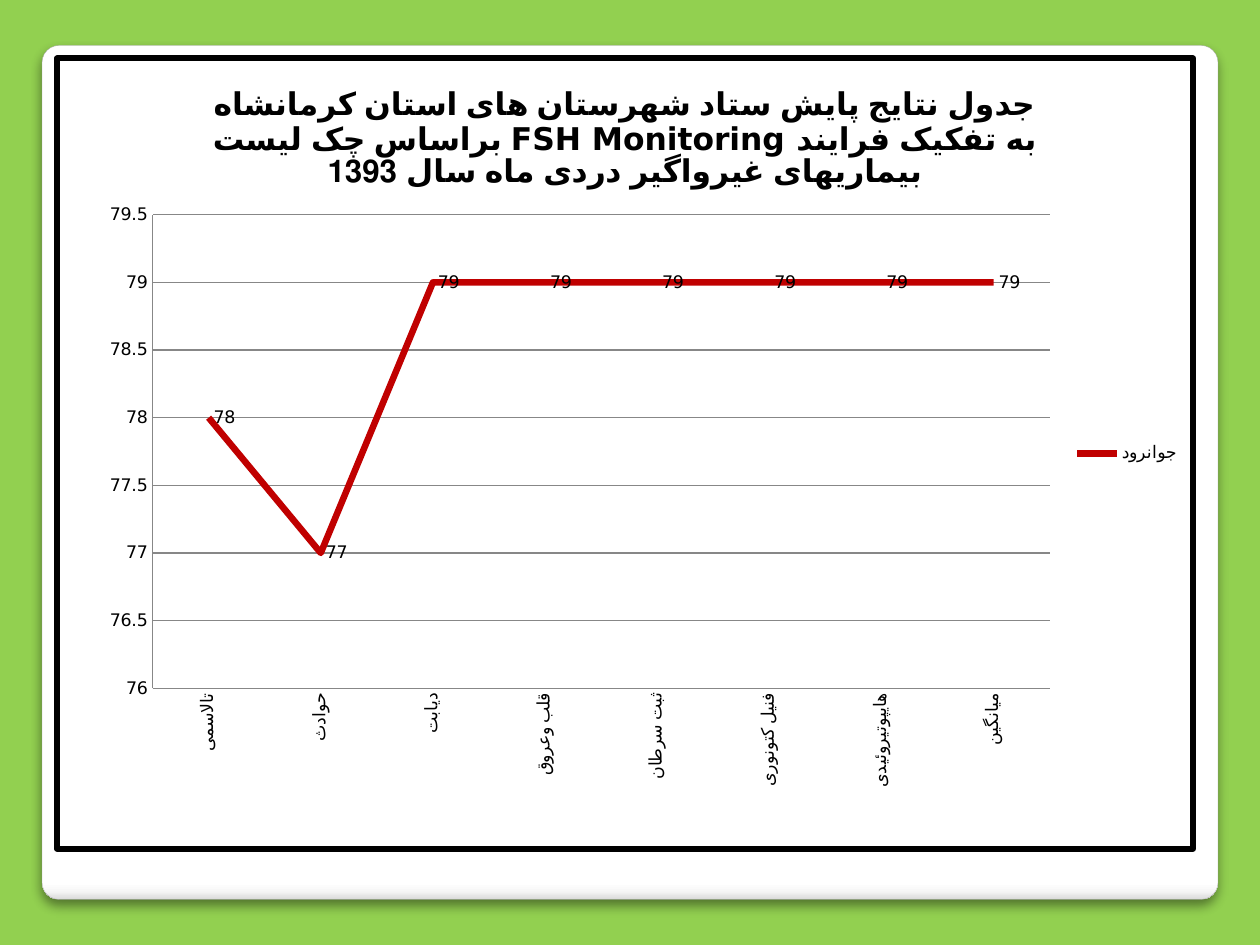
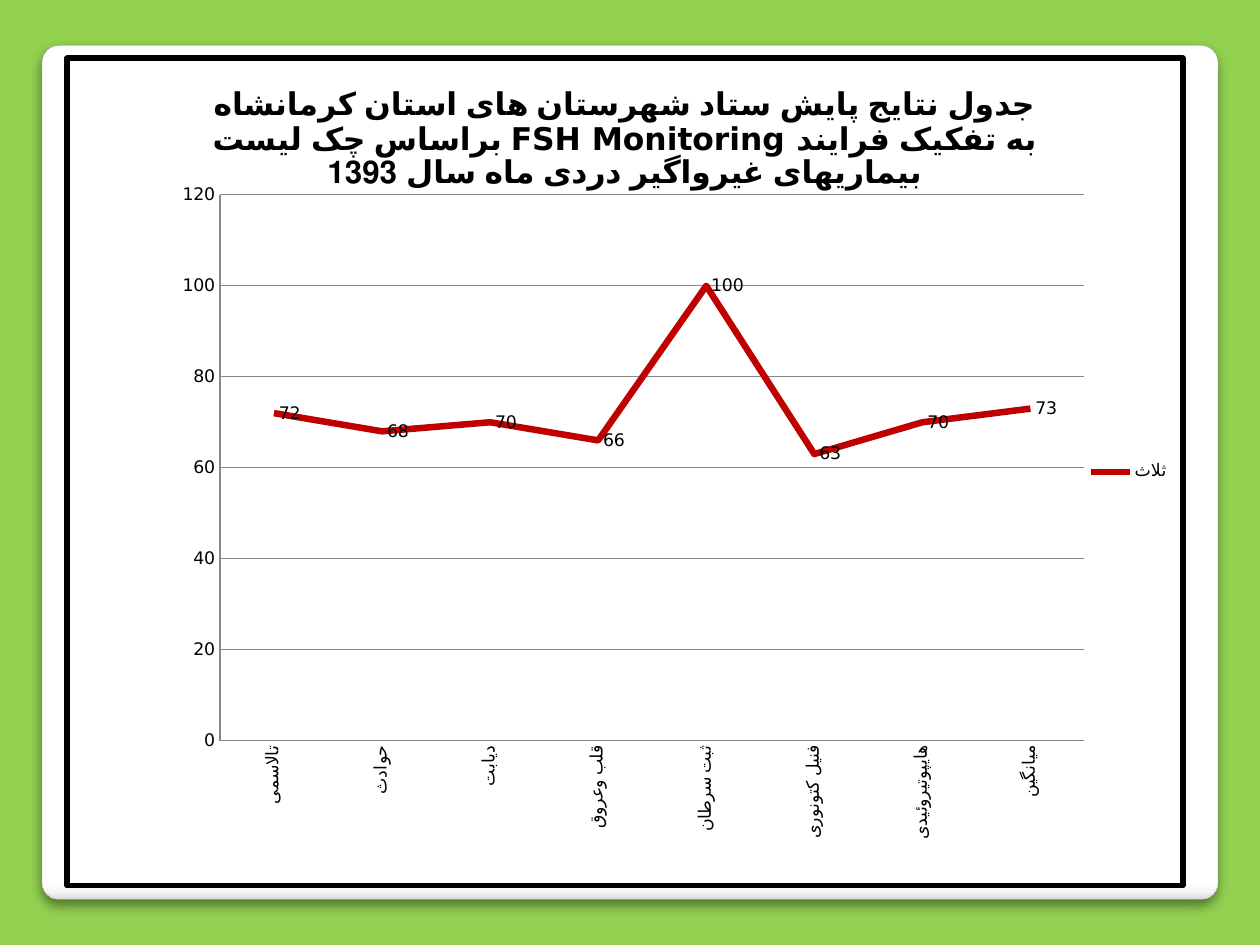
from lxml import etree
from pptx import Presentation
from pptx import oxml
from pptx.chart import data
from pptx.dml import color
from pptx.enum import chart as ch, shapes
from pptx.oxml import ns
from pptx.util import Pt

HEX = {"back": "92D050", "card": "FFFFFF", "edge": "A4A4A4", "line": "C00000",
       "grid": "878787", "ink": "000000"}
FADE = [(0, "FFFFFF"), (98, "FFFFFF"), (99, "F7F7F7"), (100, "DADADA")]
FONT = "DejaVu Sans"

TITLE = ("جدول نتایج پایش ستاد شهرستان های استان کرمانشاه براساس چک لیست "
         "FSH Monitoring به تفکیک فرایند بیماریهای غیرواگیر دردی ماه سال 1393")
CATS = ["تالاسمی", "حوادث", "دیابت", "قلب وعروق", "ثبت سرطان",
        "فنیل کتونوری", "هایپوتیروئیدی", "میانگین"]

# One entry per slide: town, values, frame in points, plot in fractions, axis
TOWNS = [
    {"name": "جوانرود", "vals": [78, 77, 79, 79, 79, 79, 79, 79],
     "box": (31, 31.7, 652.3, 455), "plot": (0.084, 0.198, 0.79, 0.599),
     "axis": (76, 79.5, 0.5)},
    {"name": "ثلاث", "vals": [72, 68, 70, 66, 100, 63, 70, 73],
     "box": (36.7, 31.7, 640.8, 476), "plot": (0.137, 0.165, 0.775, 0.66),
     "axis": (0, 120, 20)},
]


def rgb(key):
    return color.RGBColor.from_string(HEX[key])


def node(tag, body):
    """Parse one element, with its namespaces declared."""
    return oxml.parse_xml(f"<{tag} {ns.nsdecls('a', 'c')}>{body}</{tag}>")


class Deck:
    def __init__(self):
        self.prs = Presentation()
        self.prs.slide_width, self.prs.slide_height = Pt(720), Pt(540)
        fill = self.prs.slide_master.background.fill
        fill.solid()
        fill.fore_color.rgb = rgb("back")
        self.slide = None

    def page(self):
        self.slide = self.prs.slides.add_slide(self.prs.slide_layouts[6])
        self.card()

    def card(self):
        """White rounded card with a soft lower edge and shadow."""
        card = self.slide.shapes.add_shape(
            shapes.MSO_SHAPE.ROUNDED_RECTANGLE, Pt(24), Pt(26), Pt(672), Pt(488))
        card.adjustments[0] = 0.02
        card.line.color.rgb = rgb("edge")
        card.line.width = Pt(0.16)
        stops = "".join(f'<a:gs pos="{pos * 1000}"><a:srgbClr val="{tone}"/></a:gs>'
                        for pos, tone in FADE)
        fade = node("a:gradFill", f'<a:gsLst>{stops}</a:gsLst><a:lin ang="5400000"/>')
        glow = node("a:effectLst",
                    f'<a:outerShdw blurRad="{Pt(6)}" dist="{Pt(4)}" dir="5400000">'
                    f'<a:srgbClr val="{HEX["ink"]}"><a:alpha val="44000"/></a:srgbClr>'
                    '</a:outerShdw>')
        props = card.element.spPr
        props.find(ns.qn("a:prstGeom")).addnext(fade)
        props.find(ns.qn("a:ln")).addnext(glow)

    def type(self, font, size, bold=False):
        font.name, font.size, font.bold = FONT, Pt(size), bold
        font.color.rgb = rgb("ink")

    def stroke(self, line, key, width):
        line.color.rgb = rgb(key)
        line.width = Pt(width)

    def chart(self, town):
        feed = data.CategoryChartData()
        feed.categories = CATS
        feed.add_series(town["name"], town["vals"])
        chart = self.slide.shapes.add_chart(
            ch.XL_CHART_TYPE.LINE, *map(Pt, town["box"]), feed).chart
        self.type(chart.font, 10)

        # Title and legend
        chart.has_title = True
        frame = chart.chart_title.text_frame
        frame.text = TITLE
        self.type(frame.paragraphs[0].runs[0].font, 18, True)
        chart.has_legend = True
        chart.legend.position = ch.XL_LEGEND_POSITION.RIGHT
        chart.legend.include_in_layout = False

        # Line and value labels
        plot = chart.plots[0]
        plot.vary_by_categories = False
        row = plot.series[0]
        row.smooth = False
        self.stroke(row.format.line, "line", 3.75)
        plot.has_data_labels = True
        plot.data_labels.show_value = True
        plot.data_labels.position = ch.XL_LABEL_POSITION.RIGHT

        self.axes(chart, town["axis"])
        self.place(chart, town["plot"])
        self.frame(chart)

    def axes(self, chart, scale):
        for axis in (chart.category_axis, chart.value_axis):
            axis.major_tick_mark = ch.XL_TICK_MARK.NONE
            axis.minor_tick_mark = ch.XL_TICK_MARK.NONE
            self.stroke(axis.format.line, "grid", 0.75)
            self.type(axis.tick_labels.font, 10)
        vals = chart.value_axis
        vals.minimum_scale, vals.maximum_scale, vals.major_unit = scale
        vals.has_major_gridlines = True
        self.stroke(vals.major_gridlines.format.line, "grid", 0.75)
        # Category names read upwards
        body = chart.element.find(".//" + "/".join(
            ns.qn(tag) for tag in ("c:catAx", "c:txPr", "a:bodyPr")))
        body.set("rot", "-5400000")
        body.set("vert", "horz")

    def place(self, chart, spot):
        """Fix the inner plot area at the given fractions."""
        area = chart.element.find(".//" + ns.qn("c:plotArea"))
        for old in area.findall(ns.qn("c:layout")):
            area.remove(old)
        keys = [("layoutTarget", "inner"), ("xMode", "edge"), ("yMode", "edge"),
                *zip("xywh", spot)]
        body = "".join(f'<c:{key} val="{val}"/>' for key, val in keys)
        area.insert(0, node("c:layout", f"<c:manualLayout>{body}</c:manualLayout>"))

    def frame(self, chart):
        """White chart ground with a heavy black border."""
        def solid(key):
            return f'<a:solidFill><a:srgbClr val="{HEX[key]}"/></a:solidFill>'
        box = node("c:spPr", f'{solid("card")}<a:ln w="{Pt(3.35)}">{solid("ink")}</a:ln>')
        chart.element.find(ns.qn("c:txPr")).addprevious(box)


def main():
    deck = Deck()
    for town in TOWNS:
        deck.page()
        deck.chart(town)
    deck.prs.save("out.pptx")


if __name__ == "__main__":
    main()
